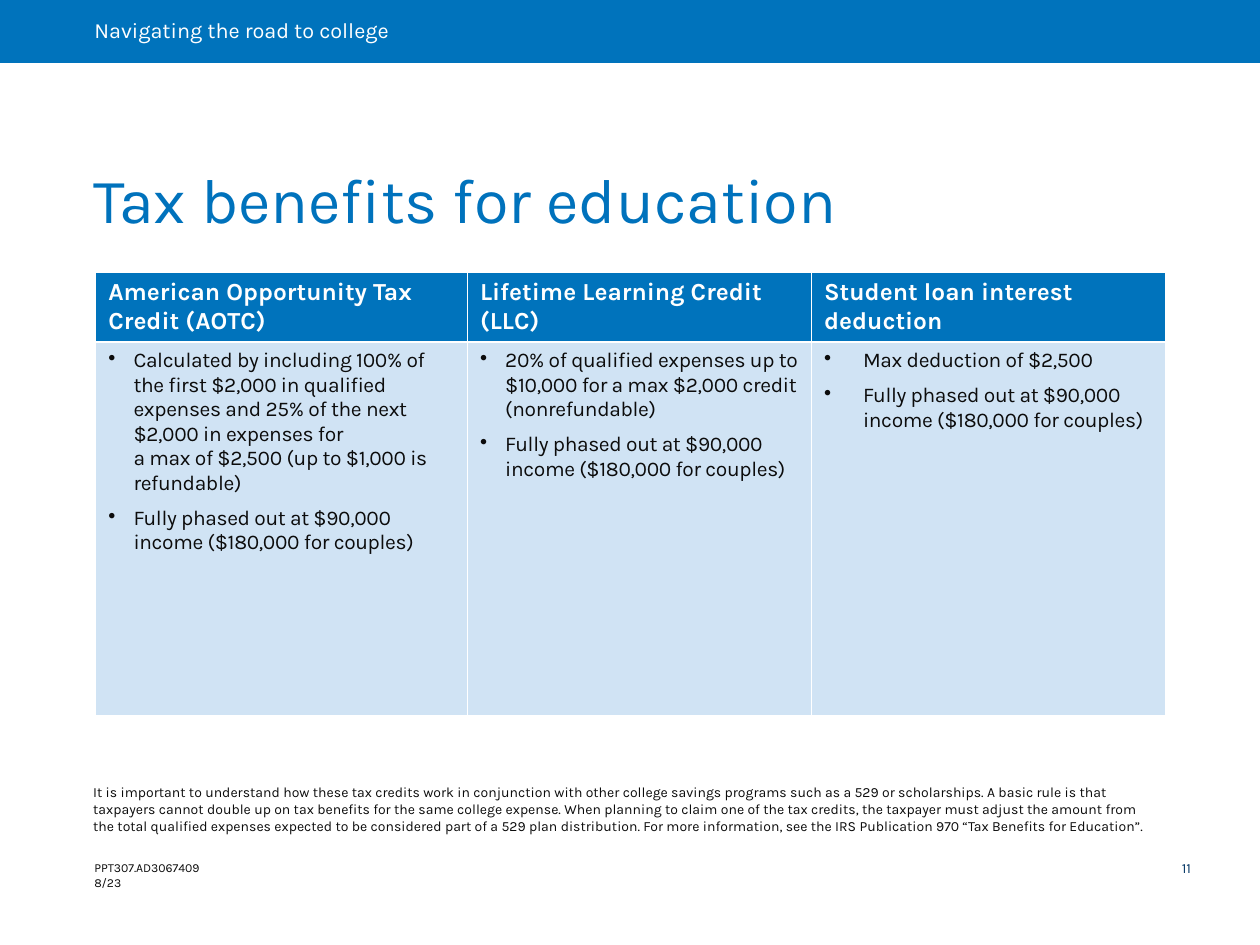
from dataclasses import dataclass

from lxml.etree import SubElement
from pptx import Presentation
from pptx.dml.color import RGBColor
from pptx.enum.shapes import MSO_SHAPE as Shape
from pptx.enum.text import MSO_ANCHOR as Anchor, MSO_AUTO_SIZE as AutoSize, PP_ALIGN as Align
from pptx.oxml.ns import qn
from pptx.util import Inches, Pt

COLUMNS, ROWS = 100, 75
PHASE_OUT = "Fully phased out at $90,000 income ($180,000 for couples)"
BENEFITS = [
    ("American Opportunity Tax Credit (AOTC)", 29.5, 0.2, [
        "Calculated by including 100% of the first $2,000 in qualified expenses and 25% of "
        "the next $2,000 in expenses for\va max of $2,500 (up to $1,000 is refundable)",
        PHASE_OUT]),
    ("Lifetime Learning Credit (LLC)", 27.3, 0.2, [
        "20% of qualified expenses up to $10,000 for a max $2,000 credit (nonrefundable)",
        PHASE_OUT]),
    ("Student loan interest deduction", 28.1, 0.31, ["Max deduction of $2,500", PHASE_OUT]),
]
FOOTNOTE = (
    "It is important to understand how these tax credits work in conjunction with other college "
    "savings programs such as a 529 or scholarships. A basic rule is that taxpayers cannot double "
    "up on tax benefits for the same college expense. When planning to claim one of the tax "
    "credits, the taxpayer must adjust the amount from the total qualified expenses expected to be "
    "considered part of a 529 plan distribution. For more information, see the IRS Publication 970 "
    "“Tax Benefits for Education”.")


def color(value):
    """Turn a hex string into a colour."""
    return RGBColor.from_string(value)


def apply(target, values):
    """Set each attribute named in a dict of format values."""
    for name, value in values.items():
        setattr(target, name, value)


@dataclass
class Deck:
    """Hold the style and the current slide."""
    slide: object
    width: int
    height: int
    font: str = "Karla"
    blue: str = "0073BC"
    title_blue: str = "0072BC"
    pale: str = "D0E3F4"
    ink: str = "0C0C0C"
    navy: str = "003463"
    white: str = "FFFFFF"

    def across(self, columns):
        """Convert grid columns to a length."""
        return round(self.width * columns / COLUMNS)

    def down(self, rows):
        """Convert grid rows to a length."""
        return round(self.height * rows / ROWS)

    def area(self, left, top, width, height):
        """Convert a grid area to slide lengths."""
        return self.across(left), self.down(top), self.across(width), self.down(height)

    def typeset(self, paragraph, text, size, ink, bold=False, spacing=1.0, before=0, after=0):
        """Put left-aligned text in the slide's font."""
        paragraph.text = text
        apply(paragraph, {"alignment": Align.LEFT, "line_spacing": spacing,
                          "space_before": Pt(before), "space_after": Pt(after)})
        for run in paragraph.runs:
            apply(run.font, {"name": self.font, "size": Pt(size), "bold": bold})
            run.font.color.rgb = color(ink)

    def frame(self, shape, margins, anchor, wrap=True):
        """Format the text frame of a shape and return its first paragraph."""
        sides = ("margin_left", "margin_top", "margin_right", "margin_bottom")
        frame = shape.text_frame
        apply(frame, {"auto_size": AutoSize.NONE, "vertical_anchor": anchor, "word_wrap": wrap})
        apply(frame, {side: Inches(margin) for side, margin in zip(sides, margins)})
        return frame.paragraphs[0]

    def placeholder(self, holder, area, text, size, ink, **style):
        """Move and fill a template placeholder."""
        apply(holder, dict(zip(("left", "top", "width", "height"), self.area(*area))))
        paragraph = self.frame(holder, (0.11, 0.06, 0.11, 0.06), Anchor.BOTTOM)
        props = paragraph._p.get_or_add_pPr()
        props.set("marL", "0")
        props.set("indent", "0")
        SubElement(props, qn("a:buNone"))
        self.typeset(paragraph, text, size, ink, **style)

    def banner(self, area, text):
        """Draw the filled section banner."""
        band = self.slide.shapes.add_shape(Shape.RECTANGLE, *self.area(*area))
        band.shadow.inherit = False
        band.fill.solid()
        band.fill.fore_color.rgb = color(self.blue)
        band.line.fill.background()
        paragraph = self.frame(band, (0.75, 0, 0.22, 0), Anchor.MIDDLE)
        self.typeset(paragraph, text, 12.4, self.white, spacing=0.9)

    def label(self, area, text, size, ink, margins, wrap=True, **style):
        """Add a small text box."""
        box = self.slide.shapes.add_textbox(*self.area(*area))
        self.typeset(self.frame(box, margins, Anchor.TOP, wrap), text, size, ink, **style)

    def fill_cell(self, cell, fill, anchor):
        """Give a cell white borders, a fill and an anchor."""
        props = cell._tc.get_or_add_tcPr()
        for side in ("lnL", "lnR", "lnT", "lnB"):
            border = SubElement(props, qn(f"a:{side}"), w=str(Pt(1)))
            solid = SubElement(border, qn("a:solidFill"))
            SubElement(solid, qn("a:srgbClr"), val=self.white)
        cell.fill.solid()
        cell.fill.fore_color.rgb = color(fill)
        cell.vertical_anchor = anchor

    def bullets(self, cell, items, indent):
        """Set a bulleted list in a cell."""
        frame = cell.text_frame
        for index, item in enumerate(items):
            paragraph = frame.add_paragraph() if index else frame.paragraphs[0]
            props = paragraph._p.get_or_add_pPr()
            props.set("marL", str(Inches(indent)))
            props.set("indent", str(-Inches(indent)))
            SubElement(props, qn("a:buChar"), char="•")
            self.typeset(paragraph, item, 12, self.ink, before=6 if index else 0)
            for run in paragraph.runs:
                run._r.get_or_add_rPr().set("spc", "-20")

    def benefits_table(self, left, top, row_heights, benefits):
        """Build a table with one column per benefit."""
        total = sum(width for _, width, _, _ in benefits)
        area = self.area(left, top, total, sum(row_heights))
        table = self.slide.shapes.add_table(len(row_heights), len(benefits), *area).table
        table.horz_banding = False
        for row, height in zip(table.rows, row_heights):
            row.height = self.down(height)
        for index, (heading, width, indent, items) in enumerate(benefits):
            table.columns[index].width = self.across(width)
            header, details = table.cell(0, index), table.cell(1, index)
            self.fill_cell(header, self.blue, Anchor.MIDDLE)
            self.typeset(header.text_frame.paragraphs[0], heading, 14, self.white, bold=True)
            self.fill_cell(details, self.pale, Anchor.TOP)
            self.bullets(details, items, indent)


def main():
    """Build and save the tax benefits slide."""
    prs = Presentation()
    prs.slide_width, prs.slide_height = Inches(10), Inches(7.5)
    slide = prs.slides.add_slide(prs.slide_layouts[1])
    deck = Deck(slide, prs.slide_width, prs.slide_height)
    deck.label((6.5, 67.8, 11.8, 2.2), "PPT307.AD3067409\v8/23", 7, deck.ink,
               (0.1, 0.05, 0.1, 0.05), wrap=False)
    deck.label((92.5, 68, 5, 2.1), "11", 8, deck.navy, (0.13, 0.04, 0.04, 0.04), spacing=0.9)
    deck.banner((0, 0, COLUMNS, 5), "Navigating the road to college")
    deck.placeholder(slide.shapes.title, (6.3, 16.4, 86.2, 3), "Tax benefits for education",
                     36, deck.title_blue, spacing=0.9)
    deck.placeholder(slide.placeholders[1], (6.3, 64.6, 86.2, 2.2), FOOTNOTE, 8, deck.ink,
                     after=3.5)
    deck.benefits_table(7.6, 21.6, (5.5, 29.7), BENEFITS)
    prs.save("out.pptx")


if __name__ == "__main__":
    main()
